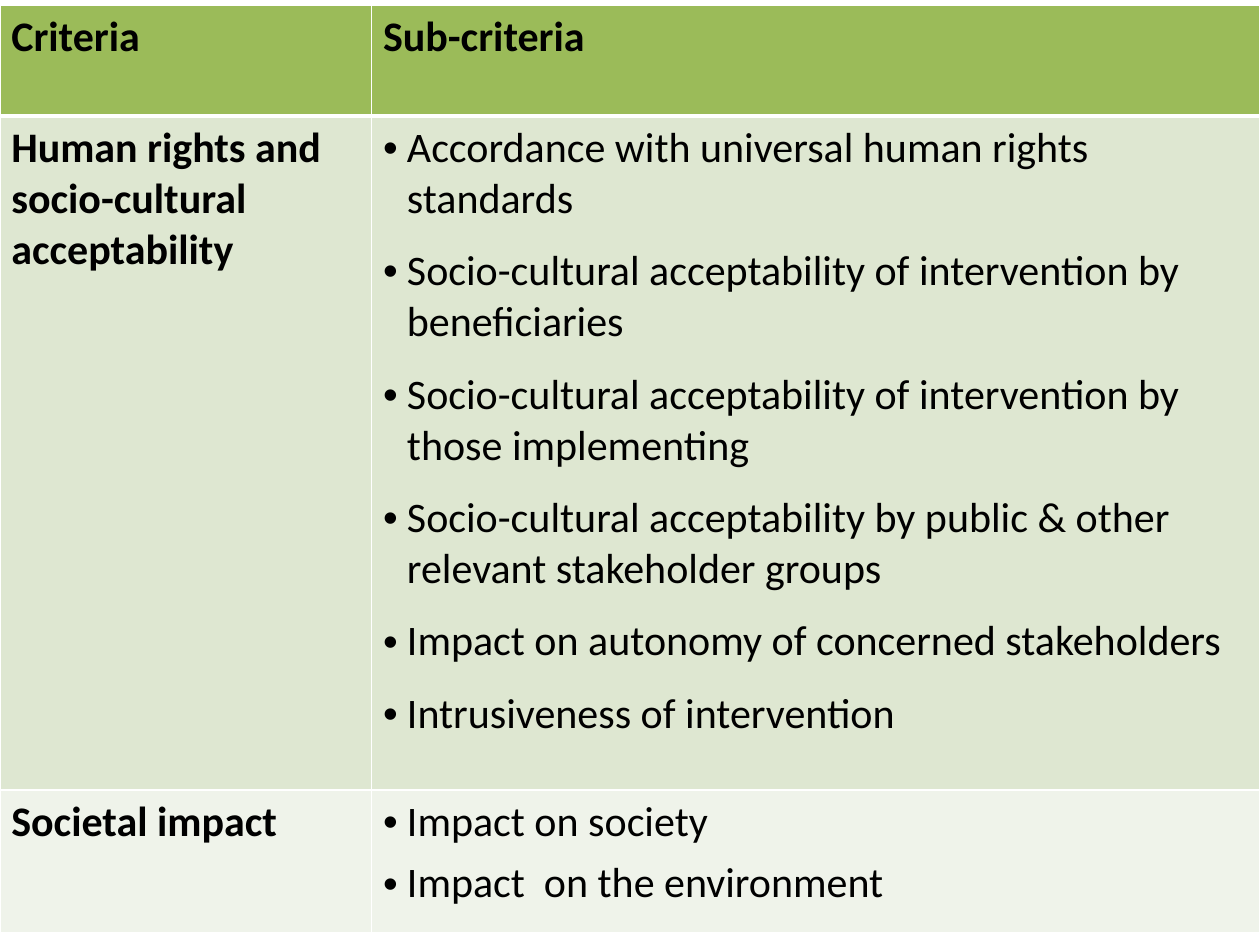
"""Build a slide with a table of social criteria and their sub-criteria."""
from dataclasses import dataclass

from lxml import etree
from pptx import Presentation
from pptx import util as u
from pptx.dml.color import RGBColor
from pptx.enum import text
from pptx.oxml import ns

HEADERS = ("Criteria", "Sub-criteria")
CRITERIA = [
    {
        "name": "Human rights and socio-cultural acceptability",
        "items": [
            "Accordance with universal human rights standards",
            "Socio-cultural acceptability of intervention by beneficiaries",
            "Socio-cultural acceptability of intervention by those implementing",
            "Socio-cultural acceptability by public & other relevant stakeholder groups",
            "Impact on autonomy of concerned stakeholders",
            "Intrusiveness of intervention",
        ],
        "space_after": 12,
    },
    {
        "name": "Societal impact",
        "items": ["Impact on society", "Impact  on the environment"],
        "space_after": 6,
    },
]
COLUMN_WIDTHS = (2.95, 7.05)
ROW_HEIGHTS = (0.88, 5.35, 1.13)
TABLE_TOP = 0.04


@dataclass(frozen=True)
class Theme:
    font: str = "Calibri"
    size: int = 24
    ink: str = "000000"
    border: str = "FFFFFF"
    border_width: float = 1
    header_border_width: float = 3
    header_fill: str = "9BBB59"
    row_fills: tuple = ("DEE7D1", "EFF3EA")
    bullet_indent: float = 0.19


THEME = Theme()


def set_borders(cell, bottom_width, top_width):
    properties = cell._tc.get_or_add_tcPr()
    widths = {"lnL": THEME.border_width, "lnR": THEME.border_width,
              "lnT": top_width, "lnB": bottom_width}
    for position, (tag, width) in enumerate(widths.items()):
        line = etree.Element(ns.qn(f"a:{tag}"), w=str(u.Pt(width)))
        fill = etree.SubElement(line, ns.qn("a:solidFill"))
        etree.SubElement(fill, ns.qn("a:srgbClr"), val=THEME.border)
        properties.insert(position, line)


def style_cell(cell, fill, top_width, bottom_width):
    cell.fill.solid()
    cell.fill.fore_color.rgb = RGBColor.from_string(fill)
    cell.margin_left = cell.margin_right = u.Inches(0.09)
    cell.margin_top = cell.margin_bottom = u.Inches(0.05)
    cell.vertical_anchor = text.MSO_ANCHOR.TOP
    set_borders(cell, bottom_width, top_width)


def add_run(paragraph, wording, bold):
    run = paragraph.add_run()
    run.text = wording
    run.font.name = THEME.font
    run.font.size = u.Pt(THEME.size)
    run.font.bold = bold
    run.font.color.rgb = RGBColor.from_string(THEME.ink)


def add_bullet(paragraph):
    properties = paragraph._p.get_or_add_pPr()
    indent = u.Inches(THEME.bullet_indent)
    properties.set("marL", str(indent))
    properties.set("indent", str(-indent))
    etree.SubElement(properties, ns.qn("a:buFont"), typeface="Arial")
    etree.SubElement(properties, ns.qn("a:buChar"), char="•")


def fill_list(cell, items, space_after):
    frame = cell.text_frame
    for index, item in enumerate(items):
        paragraph = frame.add_paragraph() if index else frame.paragraphs[0]
        paragraph.space_after = u.Pt(space_after)
        add_bullet(paragraph)
        add_run(paragraph, item, bold=False)


def add_criteria_table(slide):
    shape = slide.shapes.add_table(
        len(ROW_HEIGHTS), len(COLUMN_WIDTHS), u.Inches(0), u.Inches(TABLE_TOP),
        u.Inches(sum(COLUMN_WIDTHS)), u.Inches(sum(ROW_HEIGHTS)))
    table = shape.table
    for column, width in zip(table.columns, COLUMN_WIDTHS):
        column.width = u.Inches(width)
    for row, height in zip(table.rows, ROW_HEIGHTS):
        row.height = u.Inches(height)

    for cell, header in zip(table.rows[0].cells, HEADERS):
        style_cell(cell, THEME.header_fill, THEME.border_width, THEME.header_border_width)
        add_run(cell.text_frame.paragraphs[0], header, bold=True)

    for index, criterion in enumerate(CRITERIA):
        name_cell, list_cell = table.rows[index + 1].cells
        top_width = THEME.border_width if index else THEME.header_border_width
        for cell in (name_cell, list_cell):
            style_cell(cell, THEME.row_fills[index], top_width, THEME.border_width)
        add_run(name_cell.text_frame.paragraphs[0], criterion["name"], bold=True)
        fill_list(list_cell, criterion["items"], criterion["space_after"])


def main():
    presentation = Presentation()
    presentation.slide_width = u.Inches(10)
    presentation.slide_height = u.Inches(7.5)
    slide = presentation.slides.add_slide(presentation.slide_layouts[6])
    add_criteria_table(slide)
    presentation.save("out.pptx")


if __name__ == "__main__":
    main()
